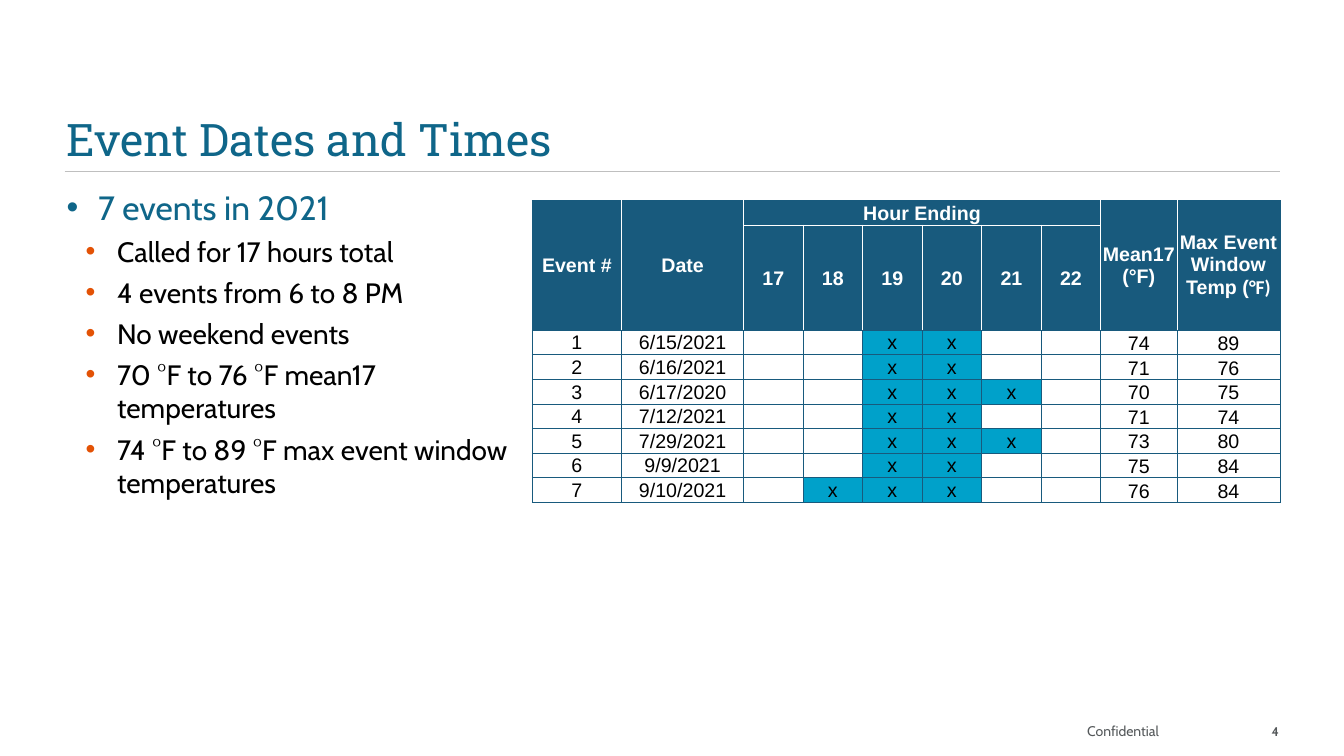
from lxml.etree import SubElement
from pptx import Presentation
from pptx.dml.color import RGBColor
from pptx.enum.shapes import MSO_CONNECTOR
from pptx.enum.text import MSO_ANCHOR, MSO_AUTO_SIZE, PP_ALIGN
from pptx.oxml.ns import qn
from pptx.util import Cm, Pt

TITLE = "Event Dates and Times"
BULLETS = [
    (0, "7 events in 2021"),
    (1, "Called for 17 hours total"),
    (1, "4 events from 6 to 8 PM"),
    (1, "No weekend events"),
    (1, "70 °F to 76 °F mean17 temperatures"),
    (1, "74 °F to 89 °F max event window temperatures"),
]
HOURS = [17, 18, 19, 20, 21, 22]
EVENTS = [  # date, hours called, mean17, max event window temperature
    ("6/15/2021", [19, 20], 74, 89),
    ("6/16/2021", [19, 20], 71, 76),
    ("6/17/2020", [19, 20, 21], 70, 75),
    ("7/12/2021", [19, 20], 71, 74),
    ("7/29/2021", [19, 20, 21], 73, 80),
    ("9/9/2021", [19, 20], 75, 84),
    ("9/10/2021", [18, 19, 20], 76, 84),
]
COLUMN_WIDTHS = [2.26, 3.07] + [1.5] * len(HOURS) + [1.92, 2.6]
ROW_HEIGHTS = [0.62, 2.65] + [0.62] * len(EVENTS)
FIRST_HOUR, LAST_HOUR = 2, 1 + len(HOURS)
MEAN, MAXIMUM = LAST_HOUR + 1, LAST_HOUR + 2

TEAL, NAVY, CYAN, ORANGE = "0F6689", "185A7D", "00A1CA", "E35205"
BLACK, WHITE, GREY, RULE = "000000", "FFFFFF", "54585A", "BFBFBF"


def color(value):
    return RGBColor.from_string(value)


def style(para, name, size, ink, bold=False):
    font = para.font
    font.name, font.size, font.bold = name, Pt(size), bold
    font.color.rgb = color(ink)


def frame_setup(frame, left, top, right, bottom, anchor):
    frame.margin_left, frame.margin_top = Cm(left), Cm(top)
    frame.margin_right, frame.margin_bottom = Cm(right), Cm(bottom)
    frame.vertical_anchor = anchor
    frame.word_wrap = True
    frame.auto_size = MSO_AUTO_SIZE.NONE


def place(shape, left, top, width, height):
    shape.left, shape.top, shape.width, shape.height = map(Cm, (left, top, width, height))


def add_bullet(para, indent, ink):
    properties = para._p.get_or_add_pPr()
    properties.set("marL", str(Cm(indent)))
    properties.set("indent", str(-Cm(0.79)))
    SubElement(SubElement(properties, qn("a:buClr")), qn("a:srgbClr"), val=ink)
    SubElement(properties, qn("a:buFont"), typeface="Arial")
    SubElement(properties, qn("a:buChar"), char="•")


def set_borders(cell, **inks):
    properties = cell._tc.get_or_add_tcPr()
    for position, side in enumerate("LRTB"):
        line = properties.makeelement(qn("a:ln" + side), {"w": str(Pt(0.5))})
        fill = SubElement(line, qn("a:solidFill"))
        SubElement(fill, qn("a:srgbClr"), val=inks.get(side, NAVY))
        properties.insert(position, line)


def fill_cell(cell, text, ink, fill=None, bold=False, anchor=MSO_ANCHOR.MIDDLE):
    cell.margin_left = cell.margin_top = cell.margin_right = Cm(0.03)
    cell.margin_bottom = 0
    cell.vertical_anchor = anchor
    if fill:
        cell.fill.solid()
        cell.fill.fore_color.rgb = color(fill)
    else:
        cell.fill.background()
    para = cell.text_frame.paragraphs[0]
    para.alignment = PP_ALIGN.CENTER
    style(para, "Arial", 14, ink, bold)
    if text:
        para.add_run().text = text
    else:
        SubElement(para._p, qn("a:endParaRPr"), sz="1400")
    return para


def add_footer(page, text, left, width, size, alignment, bold=False):
    box = page.shapes.add_textbox(Cm(left), Cm(17.73), Cm(width), Cm(1.02))
    frame_setup(box.text_frame, 0.25, 0.13, 0, 0.13, MSO_ANCHOR.BOTTOM)
    para = box.text_frame.paragraphs[0]
    para.text, para.alignment = text, alignment
    style(para, "Cabin", size, GREY, bold)


def add_heading(page):
    rule = page.shapes.add_connector(MSO_CONNECTOR.STRAIGHT, Cm(1.63), Cm(4.32), Cm(32.26), Cm(4.32))
    rule.line.color.rgb, rule.line.width = color(RULE), Pt(1)
    SubElement(rule._element.spPr, qn("a:effectLst"))
    title = page.shapes.title
    place(title, 1.68, 1.78, 30.5, 2.54)
    frame_setup(title.text_frame, 0, 0.13, 3.81, 0.13, MSO_ANCHOR.BOTTOM)
    para = title.text_frame.paragraphs[0]
    para.text, para.alignment, para.line_spacing = TITLE, PP_ALIGN.LEFT, 0.9
    style(para, "Roboto Slab", 32, TEAL)


def add_bullets(page):
    body = page.placeholders[1]
    place(body, 1.68, 4.57, 11.43, 12.34)
    frame = body.text_frame
    frame_setup(frame, 0, 0.13, 0.25, 0.13, MSO_ANCHOR.TOP)
    for number, (level, text) in enumerate(BULLETS):
        para = frame.add_paragraph() if number else frame.paragraphs[0]
        para.text, para.level = text, level
        add_bullet(para, *[(0.79, TEAL), (1.27, ORANGE)][level])
        para.space_before = Pt(5.3 if number else 0)
        style(para, "Cabin", *[(24, TEAL), (20, BLACK)][level])


def add_event_table(page):
    table = page.shapes.add_table(
        len(ROW_HEIGHTS), len(COLUMN_WIDTHS), Cm(13.41), Cm(5.05),
        Cm(sum(COLUMN_WIDTHS)), Cm(sum(ROW_HEIGHTS))).table
    table.first_row = table.horz_banding = False
    for column, width in zip(table.columns, COLUMN_WIDTHS):
        column.width = Cm(width)
    for row, height in zip(table.rows, ROW_HEIGHTS):
        row.height = Cm(height)

    # Header rows: white lines inside, navy lines around
    headings = {(0, 0): "Event #", (0, 1): "Date", (0, FIRST_HOUR): "Hour Ending",
                (0, MEAN): "Mean17 (°F)", (0, MAXIMUM): "Max Event Window Temp ("}
    headings.update({(1, FIRST_HOUR + i): str(hour) for i, hour in enumerate(HOURS)})
    for row in range(2):
        for column in range(len(COLUMN_WIDTHS)):
            cell = table.cell(row, column)
            para = fill_cell(cell, headings.get((row, column)), WHITE, NAVY, True)
            if (row, column) == (0, MAXIMUM):
                unit = para.add_run()
                unit.text, unit.font.name = "°F)", "Calibri"
            in_hours = FIRST_HOUR <= column <= LAST_HOUR
            set_borders(cell,
                        L=WHITE if column else NAVY,
                        R=WHITE if column < MAXIMUM else NAVY,
                        T=WHITE if in_hours and row == 1 else NAVY,
                        B=WHITE if in_hours and row == 0 else NAVY)
    for column in (0, 1, MEAN, MAXIMUM):
        table.cell(0, column).merge(table.cell(1, column))
    table.cell(0, FIRST_HOUR).merge(table.cell(0, LAST_HOUR))

    # One row per event
    for number, (date, called, mean, maximum) in enumerate(EVENTS, 1):
        marks = ["x" if hour in called else "" for hour in HOURS]
        values = [str(number), date, *marks, str(mean), str(maximum)]
        for column, value in enumerate(values):
            cell = table.cell(number + 1, column)
            fill_cell(cell, value, BLACK, CYAN if value == "x" else None,
                      anchor=MSO_ANCHOR.BOTTOM if column >= MEAN else MSO_ANCHOR.MIDDLE)
            set_borders(cell)


def main():
    deck = Presentation()
    deck.slide_width, deck.slide_height = Cm(33.87), Cm(19.05)
    page = deck.slides.add_slide(deck.slide_layouts[1])
    add_heading(page)
    add_bullets(page)
    add_event_table(page)
    add_footer(page, "Confidential", 27.15, 3.28, 10, PP_ALIGN.LEFT)
    add_footer(page, "4", 30.78, 1.45, 9, PP_ALIGN.RIGHT, bold=True)
    deck.save("out.pptx")


if __name__ == "__main__":
    main()
